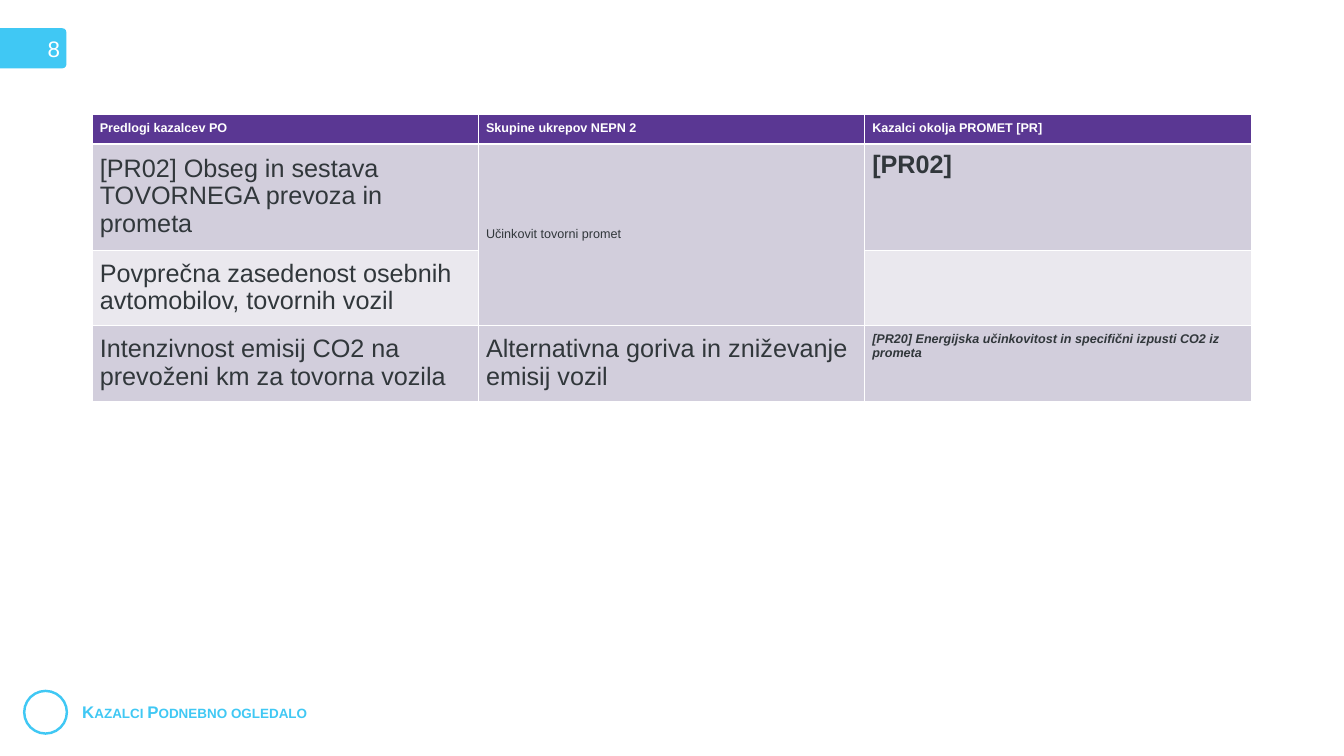
from lxml import etree
from pptx import Presentation
from pptx.dml.color import RGBColor
from pptx.enum.shapes import MSO_SHAPE as Shape
from pptx.enum.text import MSO_ANCHOR as Anchor, PP_ALIGN as Align
from pptx.oxml.ns import qn
from pptx.util import Cm, Pt

CYAN, PURPLE, WHITE, DARK = "40C8F4", "5A3793", "FFFFFF", "31373B"
BAND_DARK, BAND_LIGHT = "D2CEDC", "EAE8EE"


def rgb(value):
    return RGBColor.from_string(value)


def style(para, size, color, bold=False, italic=False):
    font = para.font
    font.name, font.size, font.bold, font.italic = "Arial", Pt(size), bold, italic
    font.color.rgb = rgb(color)


deck = Presentation()
deck.slide_width, deck.slide_height = Cm(67.72), Cm(38.1)
page = deck.slides.add_slide(deck.slide_layouts[5])

# Footer title with its ring
title = page.shapes.title
title.left, title.top, title.width, title.height = Cm(3.89), Cm(35.26), Cm(14.58), Cm(1.27)
title.text_frame.text = "Kazalci Podnebno ogledalo"
title.text_frame.vertical_anchor = Anchor.MIDDLE
para = title.text_frame.paragraphs[0]
para.alignment = Align.LEFT
style(para, 24, CYAN, bold=True)
para.runs[0].font._element.set("cap", "small")

ring = page.shapes.add_shape(Shape.OVAL, Cm(1.22), Cm(34.82), Cm(2.15), Cm(2.15))
ring.shadow.inherit = False
ring.fill.background()
ring.line.color.rgb = rgb(CYAN)
ring.line.width = Pt(3.5)

# Table: (text, size, bold, italic) in each cell, None where nothing is written
rows = [
    [("Predlogi kazalcev PO", 18, True, False),
     ("Skupine ukrepov NEPN 2", 18, True, False),
     ("Kazalci okolja PROMET [PR]", 18, True, False)],
    [("[PR02] Obseg in sestava TOVORNEGA prevoza in prometa", 36, False, False),
     ("Učinkovit tovorni promet", 18, False, False),
     ("[PR02]", 36, True, False)],
    [("Povprečna zasedenost osebnih avtomobilov, tovornih vozil", 36, False, False),
     None, None],
    [("Intenzivnost emisij CO2 na prevoženi km za tovorna vozila", 36, False, False),
     ("Alternativna goriva in zniževanje emisij vozil", 36, False, False),
     ("[PR20] Energijska učinkovitost in specifični izpusti CO2 iz prometa", 18, True, True)],
]
heights = [1.5, 5.35, 3.8, 3.83]
fills = [PURPLE, BAND_DARK, BAND_LIGHT, BAND_DARK]

frame = page.shapes.add_table(4, 3, Cm(4.65), Cm(5.74), Cm(58.38), Cm(sum(heights)))
table = frame.table
for column in table.columns:
    column.width = Cm(19.46)
table.cell(1, 1).merge(table.cell(2, 1))

for r, row in enumerate(rows):
    table.rows[r].height = Cm(heights[r])
    for c, content in enumerate(row):
        cell = table.cell(r, c)
        cell.margin_left = cell.margin_right = Cm(0.38)
        cell.margin_top = cell.margin_bottom = Cm(0.38)
        cell.vertical_anchor = Anchor.MIDDLE if r and c < 2 else Anchor.TOP
        properties = cell._tc.get_or_add_tcPr()
        for side in ("lnL", "lnR", "lnT", "lnB"):
            thick = (r, side) in ((0, "lnB"), (1, "lnT"))
            border = etree.SubElement(properties, qn(f"a:{side}"), w=str(Pt(3 if thick else 1)))
            solid = etree.SubElement(border, qn("a:solidFill"))
            etree.SubElement(solid, qn("a:srgbClr"), val=WHITE)
        cell.fill.solid()
        cell.fill.fore_color.rgb = rgb(fills[r])
        if content:
            text, size, bold, italic = content
            cell.text = text
            para = cell.text_frame.paragraphs[0]
            para.line_spacing = 0.97
            style(para, size, DARK if r else WHITE, bold, italic)

# Page number tab, running in from the left edge
tab = page.shapes.add_shape(Shape.ROUNDED_RECTANGLE, Cm(-1.3), Cm(1.42), Cm(4.65), Cm(2.03))
tab.adjustments[0] = 0.108
tab.shadow.inherit = False
tab.fill.solid()
tab.fill.fore_color.rgb = rgb(CYAN)
tab.line.fill.background()
tab.text_frame.text = "8"
tab.text_frame.vertical_anchor = Anchor.MIDDLE
para = tab.text_frame.paragraphs[0]
para.alignment = Align.RIGHT
style(para, 32, WHITE)

deck.save("out.pptx")
